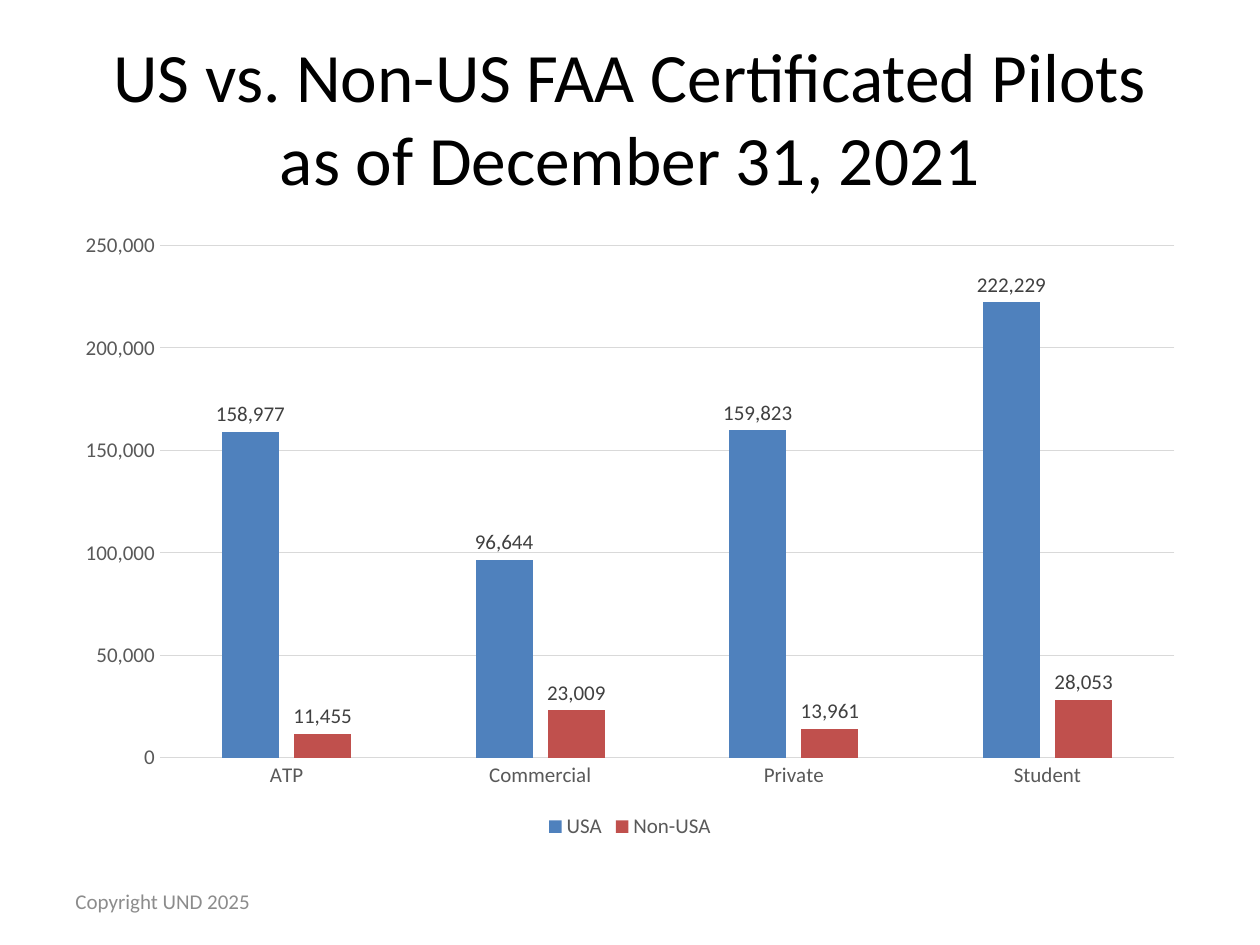
from dataclasses import dataclass

from pptx import Presentation
from pptx.chart.data import CategoryChartData
from pptx.dml.color import RGBColor
from pptx.enum.chart import XL_CHART_TYPE, XL_LABEL_POSITION, XL_LEGEND_POSITION, XL_TICK_MARK
from pptx.enum.text import MSO_ANCHOR, MSO_AUTO_SIZE, PP_ALIGN
from pptx.util import Pt

COLUMNS = XL_CHART_TYPE.COLUMN_CLUSTERED
OUTSIDE = XL_LABEL_POSITION.OUTSIDE_END
BOTTOM = XL_LEGEND_POSITION.BOTTOM
NO_TICK = XL_TICK_MARK.NONE
MIDDLE = MSO_ANCHOR.MIDDLE
NO_FIT = MSO_AUTO_SIZE.NONE
LEFT, CENTER = PP_ALIGN.LEFT, PP_ALIGN.CENTER

FONT = "Calibri"
NUMBER = "#,##0"
MARGIN, CONTENT_W = 36, 648
COLORS = {
    "title": "000000",
    "footer": "8C8C8C",
    "axis": "595959",
    "label": "404040",
    "grid": "D9D9D9",
    "usa": "4F81BD",
    "non_usa": "C0504D",
}
CATEGORIES = ["ATP", "Commercial", "Private", "Student"]


@dataclass
class PilotGroup:
    name: str
    counts: list[int]
    color: str


GROUPS = [
    PilotGroup("USA", [158977, 96644, 159823, 222229], "usa"),
    PilotGroup("Non-USA", [11455, 23009, 13961, 28053], "non_usa"),
]


def rgb(color: str) -> RGBColor:
    return RGBColor.from_string(COLORS[color])


def set_font(font, size: float, color: str) -> None:
    font.name = FONT
    font.size = Pt(size)
    font.color.rgb = rgb(color)


def set_line(line, color: str) -> None:
    line.color.rgb = rgb(color)
    line.width = Pt(0.75)


def write(tf, text: str, *, size: float, color: str, align=LEFT) -> None:
    tf.word_wrap = True
    tf.auto_size = NO_FIT
    tf.vertical_anchor = MIDDLE
    p = tf.paragraphs[0]
    p.alignment = align
    r = p.add_run()
    r.text = text
    set_font(r.font, size, color)


def style_axis(axis) -> None:
    axis.major_tick_mark = NO_TICK
    axis.minor_tick_mark = NO_TICK
    set_font(axis.tick_labels.font, 12, "axis")


def add_pilot_chart(s) -> None:
    data = CategoryChartData(number_format=NUMBER)
    data.categories = CATEGORIES
    for group in GROUPS:
        data.add_series(group.name, group.counts)
    chart = s.shapes.add_chart(
        COLUMNS, Pt(MARGIN), Pt(126), Pt(CONTENT_W), Pt(356.4), data
    ).chart
    chart.has_title = False
    set_font(chart.font, 10, "title")

    chart.has_legend = True
    chart.legend.position = BOTTOM
    chart.legend.include_in_layout = False
    set_font(chart.legend.font, 12, "axis")

    style_axis(chart.category_axis)
    set_line(chart.category_axis.format.line, "grid")
    values = chart.value_axis
    style_axis(values)
    values.format.line.fill.background()
    values.has_major_gridlines = True
    set_line(values.major_gridlines.format.line, "grid")
    values.tick_labels.number_format = NUMBER
    values.tick_labels.number_format_is_linked = False

    plot = chart.plots[0]
    plot.gap_width = 219
    plot.overlap = -27
    plot.vary_by_categories = False
    for series, group in zip(plot.series, GROUPS):
        series.format.fill.solid()
        series.format.fill.fore_color.rgb = rgb(group.color)
        series.invert_if_negative = False
        labels = series.data_labels
        labels.show_value = True
        labels.position = OUTSIDE
        labels.number_format = NUMBER
        labels.number_format_is_linked = False
        set_font(labels.font, 12, "label")


def main() -> None:
    prs = Presentation()
    prs.slide_width, prs.slide_height = Pt(720), Pt(540)
    s = prs.slides.add_slide(prs.slide_layouts[5])

    title = s.shapes.title
    title.left, title.top = Pt(MARGIN), Pt(21.6)
    title.width, title.height = Pt(CONTENT_W), Pt(90)
    write(
        title.text_frame,
        "US vs. Non-US FAA Certificated Pilots as of December 31, 2021",
        size=39.6, color="title", align=CENTER,
    )
    add_pilot_chart(s)
    footer = s.shapes.add_textbox(Pt(MARGIN), Pt(500.4), Pt(168), Pt(28.8))
    write(footer.text_frame, "Copyright UND 2025", size=12, color="footer")
    prs.save("out.pptx")


if __name__ == "__main__":
    main()
